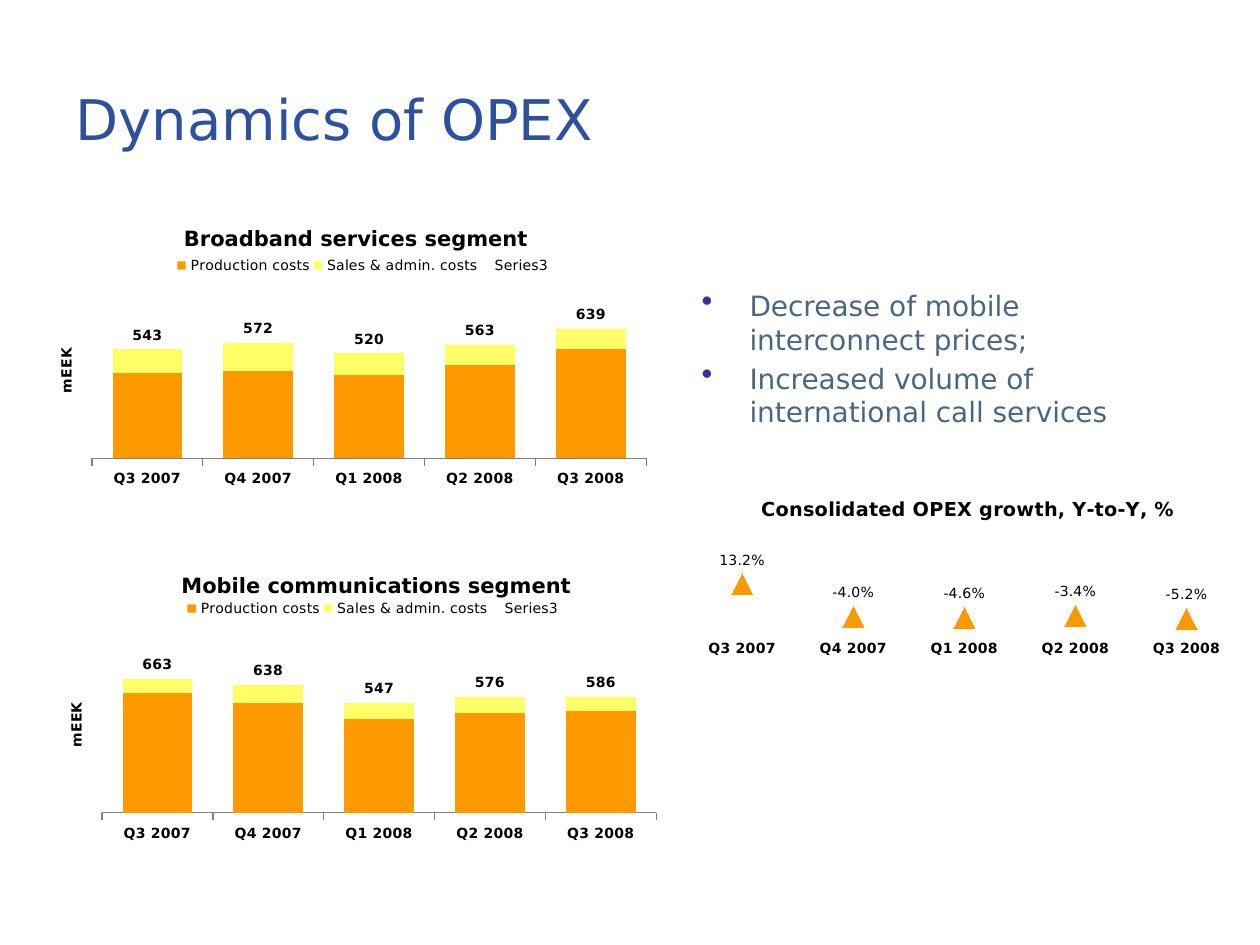
from lxml import etree
from pptx import Presentation
from pptx import util as u
from pptx.chart import data as chart_data
from pptx.dml.color import RGBColor
from pptx.enum import chart as kinds, text
from pptx.oxml import ns

WIDTH, HEIGHT = u.Inches(10), u.Inches(7.5)
FACE = "DejaVu Sans"
BLUE = RGBColor(0x2E, 0x51, 0x9E)
SLATE = RGBColor(0x4A, 0x67, 0x82)
ORANGE = RGBColor(0xFF, 0x99, 0x00)
YELLOW = RGBColor(0xFF, 0xFF, 0x66)
GREY = RGBColor(0x80, 0x80, 0x80)
BLACK = RGBColor(0, 0, 0)
BULLET = "333399"
QUARTERS = ["Q3 2007", "Q4 2007", "Q1 2008", "Q2 2008", "Q3 2008"]


def share(left, top, width, height):
    """Turn shares of the slide into lengths."""
    return (int(WIDTH * left), int(HEIGHT * top),
            int(WIDTH * width), int(HEIGHT * height))


def set_all(target, **values):
    for name, value in values.items():
        setattr(target, name, value)


def set_font(font, size, color=BLACK, bold=False):
    set_all(font, name=FACE, size=u.Pt(size), bold=bold)
    font.color.rgb = color


def place(part, index, inner=False, **shares):
    """Give a chart part a manual layout in shares of its chart."""
    for old in part.findall(ns.qn("c:layout")):
        part.remove(old)
    layout = etree.Element(ns.qn("c:layout"))
    manual = etree.SubElement(layout, ns.qn("c:manualLayout"))
    values = {"layoutTarget": "inner"} if inner else {}
    values.update(xMode="edge", yMode="edge", **shares)
    for name, value in values.items():
        etree.SubElement(manual, ns.qn(f"c:{name}")).set("val", str(value))
    part.insert(index, layout)


def add_title(slide):
    title = slide.shapes.title
    set_all(title, **dict(zip(("left", "top", "width", "height"),
                              share(0.05, 0.04, 0.68, 0.17))))
    frame = title.text_frame
    set_all(frame, text="Dynamics of OPEX", word_wrap=True,
            vertical_anchor=text.MSO_ANCHOR.MIDDLE)
    para = frame.paragraphs[0]
    para.alignment = text.PP_ALIGN.LEFT
    set_font(para.runs[0].font, 32, BLUE)


def add_bullets(slide, lines):
    box = slide.shapes.add_textbox(*share(0.547, 0.292, 0.408, 0.247))
    frame = box.text_frame
    inset = u.Inches(0.1)
    set_all(frame, word_wrap=True, margin_left=inset, margin_right=inset,
            margin_top=inset, margin_bottom=inset)
    for number, line in enumerate(lines):
        para = frame.paragraphs[0] if number == 0 else frame.add_paragraph()
        properties = para._p.get_or_add_pPr()
        properties.set("marL", str(u.Inches(0.38)))
        properties.set("indent", str(-u.Inches(0.38)))
        if number:
            para.space_before = u.Pt(3.2)
        color = etree.SubElement(properties, ns.qn("a:buClr"))
        etree.SubElement(color, ns.qn("a:srgbClr")).set("val", BULLET)
        etree.SubElement(properties, ns.qn("a:buSzPct")).set("val", "115000")
        etree.SubElement(properties, ns.qn("a:buChar")).set("char", "•")
        span = para.add_run()
        span.text = line
        set_font(span.font, 16, SLATE)


def add_chart(slide, kind, area, heading, size, heading_at, series):
    """Add a chart with what all charts here share."""
    data = chart_data.CategoryChartData()
    data.categories = QUARTERS
    for name, values in series:
        data.add_series(name, values)
    chart = slide.shapes.add_chart(kind, *share(*area), data).chart
    set_all(chart.font, name="Arial", size=u.Pt(10))
    chart.font.color.rgb = BLACK
    chart.has_legend = False
    frame = chart.chart_title.text_frame
    frame.text = heading
    set_font(frame.paragraphs[0].runs[0].font, size, bold=True)
    chart.chart_title.include_in_layout = True
    place(chart.chart_title._element, 1, x=heading_at[0], y=heading_at[1])
    set_font(chart.category_axis.tick_labels.font, 8, bold=True)
    set_all(chart.value_axis, visible=False, has_major_gridlines=False)
    return chart


def add_labels(series, position, number_format, bold):
    labels = series.data_labels
    set_all(labels, show_value=True, position=position,
            number_format=number_format, number_format_is_linked=False)
    set_font(labels.font, 8, bold=bold)


def add_segment_chart(slide, left, top, heading, heading_at, legend_top,
                      plot_top, production, admin, totals):
    chart = add_chart(
        slide, kinds.XL_CHART_TYPE.COLUMN_STACKED, (left, top, 0.5, 0.4),
        heading, 12, heading_at,
        [("Production costs", production), ("Sales & admin. costs", admin),
         ("Series3", totals)])
    plot = chart.plots[0]
    set_all(plot, gap_width=59, overlap=100, vary_by_categories=False)
    for series, color in zip(plot.series, (ORANGE, YELLOW)):
        series.format.fill.solid()
        series.format.fill.fore_color.rgb = color
    total = plot.series[2]
    total.format.fill.background()
    add_labels(total, kinds.XL_LABEL_POSITION.INSIDE_BASE, "#,##0", True)

    chart.has_legend = True
    set_all(chart.legend, position=kinds.XL_LEGEND_POSITION.TOP,
            include_in_layout=True)
    set_font(chart.legend.font, 8)
    place(chart.legend._element, 1, x=0.23, y=legend_top, w=0.6, h=0.06)

    axis = chart.value_axis
    set_all(axis, minimum_scale=0, maximum_scale=1400)
    axis.tick_labels.number_format = "0"
    frame = axis.axis_title.text_frame
    frame.text = "mEEK"
    set_font(frame.paragraphs[0].runs[0].font, 8, bold=True)
    frame._txBody.bodyPr.set("rot", "-5400000")
    frame._txBody.bodyPr.set("vert", "horz")
    place(axis.axis_title._element, 1, x=0.04, y=0.6)

    chart.category_axis.major_tick_mark = kinds.XL_TICK_MARK.OUTSIDE
    chart.category_axis.format.line.color.rgb = GREY
    place(chart._chartSpace.chart.plotArea, 0, inner=True,
          x=0.1, y=plot_top, w=0.88, h=round(0.9 - plot_top, 2))


def add_growth_chart(slide):
    chart = add_chart(
        slide, kinds.XL_CHART_TYPE.LINE_MARKERS_STACKED,
        (0.531, 0.385, 0.469, 0.4), "Consolidated OPEX growth, Y-to-Y, %",
        11, (0.15, 0.34),
        [("Series 1", (0.132, -0.04, -0.046, -0.034, -0.052))])
    chart.plots[0].vary_by_categories = False
    growth = chart.plots[0].series[0]
    growth.smooth = False
    growth.format.line.fill.background()
    marker = growth.marker
    set_all(marker, style=kinds.XL_MARKER_STYLE.TRIANGLE, size=12)
    marker.format.fill.solid()
    marker.format.fill.fore_color.rgb = ORANGE
    marker.format.line.fill.background()
    add_labels(growth, kinds.XL_LABEL_POSITION.ABOVE, "0.0%", False)
    set_all(chart.value_axis, minimum_scale=-0.1, maximum_scale=1.2,
            major_unit=0.5)
    chart.value_axis.tick_labels.number_format = "0.0%"
    set_all(chart.category_axis, major_tick_mark=kinds.XL_TICK_MARK.NONE,
            tick_label_position=kinds.XL_TICK_LABEL_POSITION.LOW)
    chart.category_axis.format.line.fill.background()
    place(chart._chartSpace.chart.plotArea, 0, inner=True,
          x=0.03, y=0.05, w=0.94, h=0.65)


def main():
    deck = Presentation()
    set_all(deck, slide_width=WIDTH, slide_height=HEIGHT)
    slide = deck.slides.add_slide(deck.slide_layouts[5])
    add_title(slide)
    add_bullets(slide, ["Decrease of mobile interconnect prices;",
                        "Increased volume of international call services"])
    add_segment_chart(
        slide, 0.023, 0.125, "Broadband services segment", (0.24, 0.27),
        0.36, 0.15, (420, 430, 410, 460, 540), (120, 140, 110, 100, 100),
        (543, 572, 520, 563, 639))
    add_segment_chart(
        slide, 0.031, 0.5, "Mobile communications segment", (0.22, 0.25),
        0.33, 0.16, (600, 550, 470, 500, 510), (70, 90, 80, 80, 70),
        (663, 638, 547, 576, 586))
    add_growth_chart(slide)
    deck.save("out.pptx")


if __name__ == "__main__":
    main()
